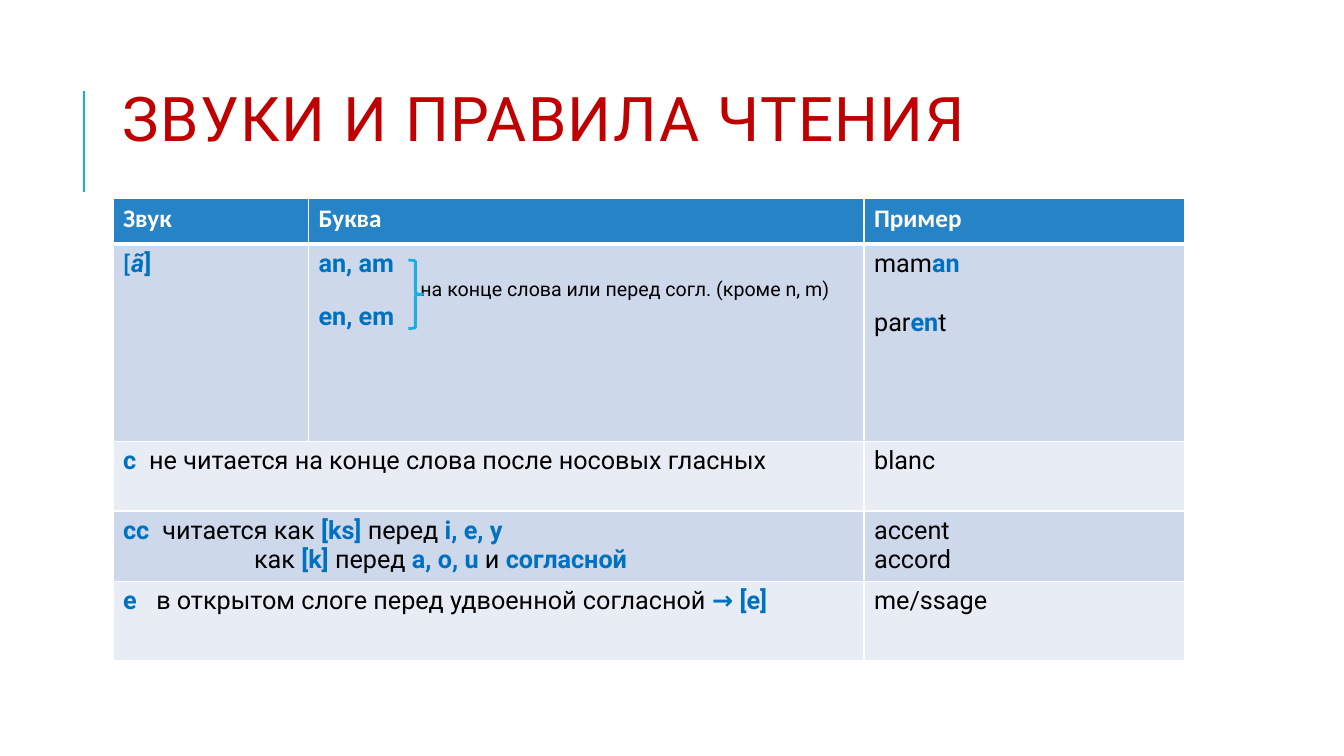
from dataclasses import dataclass

import pptx
import pptx.dml.color
import pptx.enum.shapes
import pptx.enum.text
import pptx.oxml
import pptx.oxml.ns
import pptx.util

Inches = pptx.util.Inches
Pt = pptx.util.Pt


@dataclass(frozen=True)
class Theme:
    title: str = "C00000"
    accent: str = "1CADE4"
    header: str = "2683C6"
    bands: tuple = ("CDD9EA", "E8EDF5")
    key: str = "0070C0"
    body: str = "000000"
    white: str = "FFFFFF"
    font: str = "Roboto"
    header_font: str = "Calibri"
    title_size: int = 44
    body_size: int = 18
    note_size: int = 14


THEME = Theme()
COLUMNS = (1.94, 5.51, 3.18)
ROWS = (0.45, 1.96, 0.69, 0.68, 0.78)


def rgb(value):
    return pptx.dml.color.RGBColor.from_string(value)


def add_xml(parent, markup):
    namespace = pptx.oxml.ns.nsdecls("a")
    parent.append(pptx.oxml.parse_xml(markup.replace("XMLNS", namespace)))


def plain(text, **style):
    return text, style


def key(text, **style):
    return text, {"color": THEME.key, "bold": True, **style}


def add_text(para, text, size=THEME.body_size, color=THEME.body,
             font=THEME.font, bold=False, italic=False, spacing=0):
    span = para.add_run()
    span.text = text
    span.font.size = Pt(size)
    span.font.name = font
    span.font.bold = bold
    span.font.italic = italic
    span.font.color.rgb = rgb(color)
    if spacing:
        span.font._element.set("spc", str(spacing * 100))


def line(*spans, indent=0, tab=0, before=0):
    """Describe one paragraph: its spans, left indent and tab in inches, space before in points."""
    return spans, indent, tab, before


def fill_frame(frame, lines):
    for index, (spans, indent, tab, before) in enumerate(lines):
        para = frame.add_paragraph() if index else frame.paragraphs[0]
        if before:
            para.space_before = Pt(before)
        properties = para._p.get_or_add_pPr()
        if indent:
            properties.set("marL", str(Inches(indent)))
        if tab:
            add_xml(properties, f'<a:tabLst XMLNS><a:tab pos="{Inches(tab)}" algn="l"/></a:tabLst>')
        for text, style in spans:
            add_text(para, text, **style)


def add_title(page, left, top, width, height):
    rule = page.shapes.add_connector(
        pptx.enum.shapes.MSO_CONNECTOR.STRAIGHT,
        Inches(left - 0.29), Inches(top + 1.31), Inches(left - 0.29), Inches(top + 0.31))
    rule.line.color.rgb = rgb(THEME.accent)
    rule.line.width = Pt(1.5)
    add_xml(rule._element.spPr, "<a:effectLst XMLNS/>")

    box = page.shapes.add_textbox(Inches(left), Inches(top), Inches(width), Inches(height))
    frame = box.text_frame
    frame.word_wrap = True
    frame.vertical_anchor = pptx.enum.text.MSO_ANCHOR.MIDDLE
    para = frame.paragraphs[0]
    para.line_spacing = 0.8
    add_text(para, "ЗВУКИ И ПРАВИЛА ЧТЕНИЯ", size=THEME.title_size, color=THEME.title, spacing=1)


def style_cell(cell, row):
    properties = cell._tc.get_or_add_tcPr()
    heavy = {0: "B", 1: "T"}.get(row)
    for side in "LRTB":
        width = Pt(3 if side == heavy else 1)
        add_xml(properties, f'<a:ln{side} XMLNS w="{width}"><a:solidFill>'
                            f'<a:srgbClr val="{THEME.white}"/></a:solidFill></a:ln{side}>')
    cell.fill.solid()
    cell.fill.fore_color.rgb = rgb(THEME.bands[(row - 1) % 2] if row else THEME.header)


def rule_rows():
    """Return the table's rows; a row of two cells has its first cell across two columns."""
    heading = [[line(plain(name, font=THEME.header_font, color=THEME.white, bold=True))]
               for name in ("Звук", "Буква", "Пример")]
    nasal = [
        [line(key("[", font=THEME.header_font), key("ã", italic=True), key("]"))],
        [line(key("an, am")),
         line(plain("на конце слова или перед согл. (кроме n, m)", size=THEME.note_size),
              indent=1.01),
         line(key("en, em"))],
        [line(plain("mam"), key("an")),
         line(plain("par"), key("en"), plain("t"), before=21)],
    ]
    silent = [
        [line(key("c\t"), plain("не читается на конце слова после носовых гласных"), tab=0.26)],
        [line(plain("blanc"))],
    ]
    double = [
        [line(key("cc\t"), plain("читается как "), key("[ks] "), plain("перед "),
              key("i, e, y"), tab=0.39),
         line(plain("как "), key("[k] "), plain("перед "), key("a, o, u "),
              plain("и "), key("согласной"), indent=1.3)],
        [line(plain("accent")), line(plain("accord"))],
    ]
    open_syllable = [
        [line(key("e\t"), plain("в открытом слоге перед удвоенной согласной"),
              key(" → [e]"), tab=0.33)],
        [line(plain("me/ssage"))],
    ]
    return heading, nasal, silent, double, open_syllable


def add_rules_table(page, left, top):
    table = page.shapes.add_table(
        len(ROWS), len(COLUMNS), Inches(left), Inches(top),
        Inches(sum(COLUMNS)), Inches(sum(ROWS))).table
    for column, width in zip(table.columns, COLUMNS):
        column.width = Inches(width)
    for row, height in zip(table.rows, ROWS):
        row.height = Inches(height)
    for number, contents in enumerate(rule_rows()):
        cells = list(table.rows[number].cells)
        for cell in cells:
            style_cell(cell, number)
        if len(contents) == 2:
            cells[0].merge(cells[1])
            del cells[1]
        for cell, lines in zip(cells, contents):
            fill_frame(cell.text_frame, lines)

    brace = page.shapes.add_shape(
        pptx.enum.shapes.MSO_SHAPE.RIGHT_BRACE,
        Inches(left + 2.93), Inches(top + 0.61), Inches(0.14), Inches(0.68))
    brace.shadow.inherit = False
    brace.fill.background()
    brace.line.color.rgb = rgb(THEME.accent)
    brace.line.width = Pt(2)


def main():
    deck = pptx.Presentation()
    deck.slide_width = Inches(13.33)
    deck.slide_height = Inches(7.5)
    page = deck.slides.add_slide(deck.slide_layouts[6])
    add_title(page, 1.12, 0.59, 10.63, 1.27)
    add_rules_table(page, 1.12, 1.97)
    deck.save("out.pptx")


if __name__ == "__main__":
    main()
